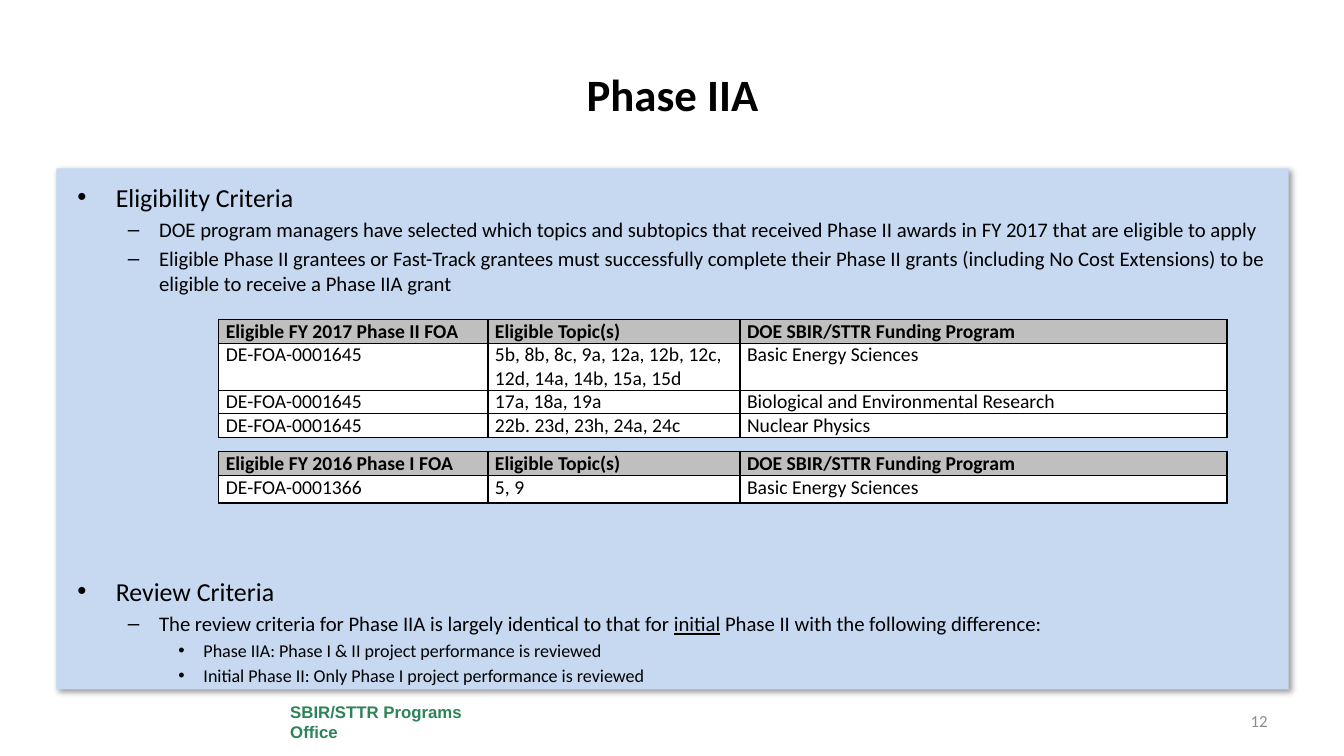
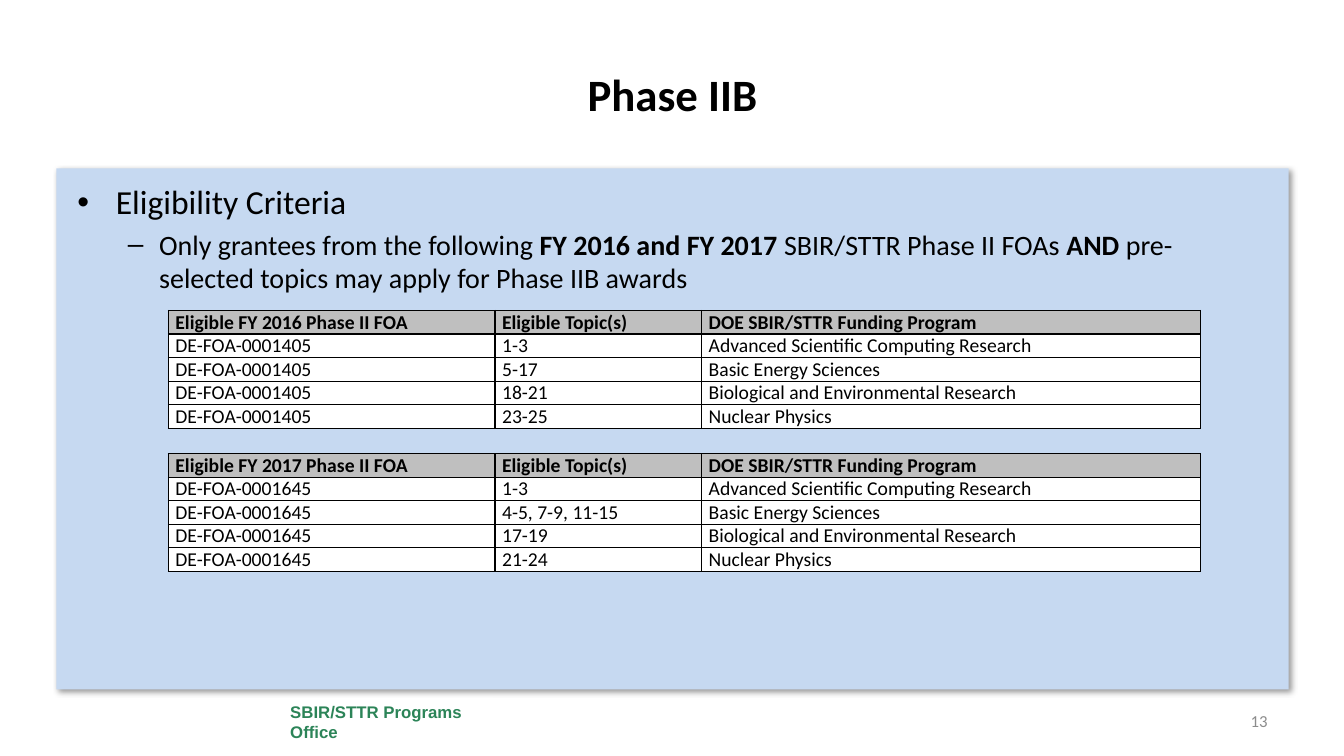
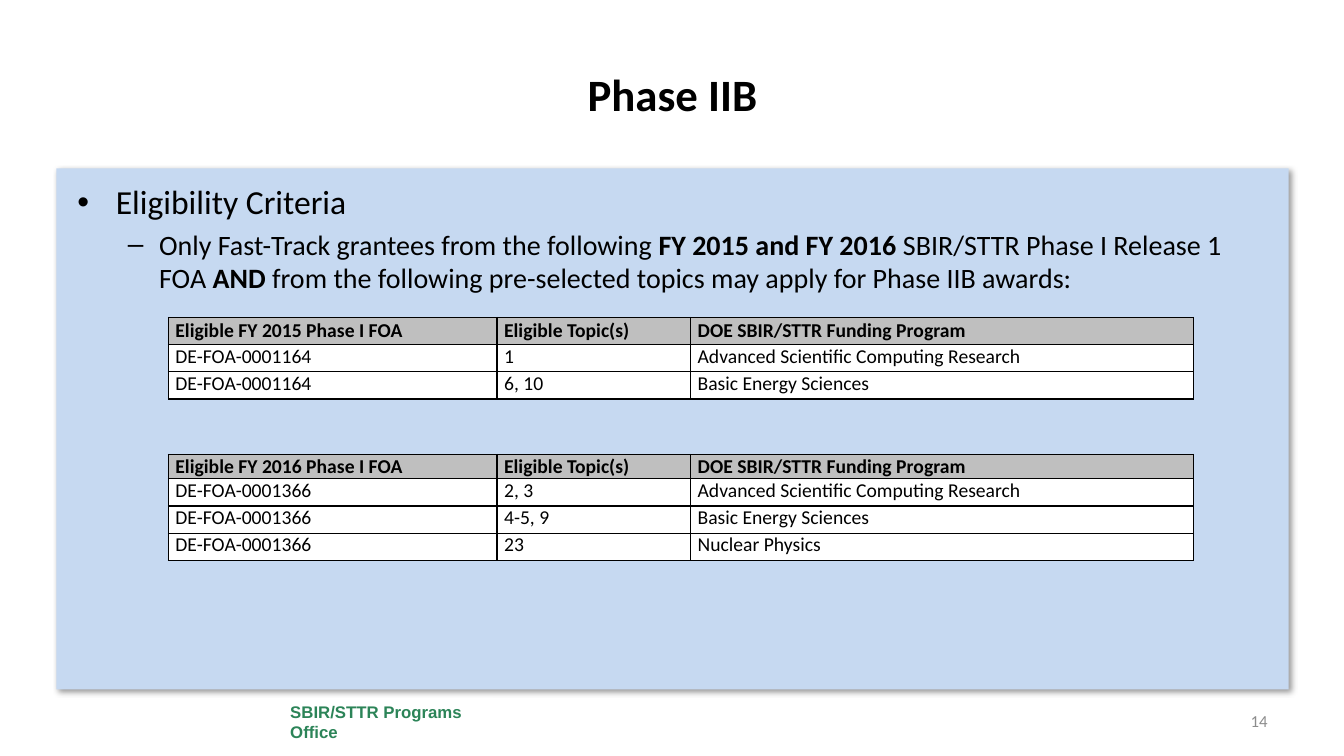
import pptx
import pptx.util
import pptx.dml.color
import pptx.enum.shapes
import pptx.enum.text
import pptx.oxml
import pptx.oxml.ns

Inches = pptx.util.Inches
Pt = pptx.util.Pt
ALIGN = pptx.enum.text.PP_ALIGN
MIDDLE = pptx.enum.text.MSO_ANCHOR.MIDDLE
NS = pptx.oxml.ns.nsdecls("a")

BLACK, WHITE, PANEL, HEADER = "000000", "FFFFFF", "C6D9F1", "BFBFBF"
GREEN, GRAY = "2C8458", "8C8C8C"
FOOTER = "SBIR/STTR Programs Office"
FIRST_NUMBER = 12
LEVELS = [(0.38, -0.38, "•"), (0.81, -0.31, "–"), (1.25, -0.25, "•")]

ASCR = "Advanced Scientific Computing Research"
BES = "Basic Energy Sciences"
BER = "Biological and Environmental Research"
NP = "Nuclear Physics"

SLIDES = [
    {
        "title": "Phase IIA",
        "sizes": (18.5, 14.8, 12.9),
        "bullets": [
            (0, ["Eligibility Criteria"]),
            (1, ["DOE program managers have selected which topics and subtopics that received "
                 "Phase II awards in FY 2017 that are eligible to apply"]),
            (1, ["Eligible Phase II grantees or Fast-Track grantees must successfully complete "
                 "their Phase II grants (including No Cost Extensions) to be eligible to receive "
                 "a Phase IIA grant"]),
            (0, ["Review Criteria"], 200),
            (1, ["The review criteria for Phase IIA is largely identical to that for ",
                 ("initial", {"underline": True}),
                 " Phase II with the following difference:"]),
            (2, ["Phase IIA: Phase I & II project performance is reviewed"]),
            (2, ["Initial Phase II: Only Phase I project performance is reviewed"]),
        ],
        "left": 2.17,
        "columns": (2.67, 2.5, 4.83),
        "tables": [
            (3.17, 0.23, 0.23, "Eligible FY 2017 Phase II FOA", "DE-FOA-0001645", [
                ("5b, 8b, 8c, 9a, 12a, 12b, 12c, 12d, 14a, 14b, 15a, 15d", BES),
                ("17a, 18a, 19a", BER),
                ("22b. 23d, 23h, 24a, 24c", NP)]),
            (4.48, 0.24, 0.27, "Eligible FY 2016 Phase I FOA", "DE-FOA-0001366", [
                ("5, 9", BES)]),
        ],
    },
    {
        "title": "Phase IIB",
        "sizes": (24, 20),
        "bullets": [
            (0, ["Eligibility Criteria"]),
            (1, ["Only grantees from the following ",
                 ("FY 2016 and FY 2017 ", {"bold": True}),
                 "SBIR/STTR Phase II FOAs ",
                 ("AND", {"bold": True}),
                 " pre-selected topics may apply for Phase IIB awards"]),
        ],
        "left": 1.67,
        "columns": (3.24, 2.05, 4.95),
        "tables": [
            (3.08, 0.23, 0.23, "Eligible FY 2016 Phase II FOA", "DE-FOA-0001405", [
                ("1-3", ASCR), ("5-17", BES), ("18-21", BER), ("23-25", NP)]),
            (4.5, 0.23, 0.23, "Eligible FY 2017 Phase II FOA", "DE-FOA-0001645", [
                ("1-3", ASCR), ("4-5, 7-9, 11-15", BES), ("17-19", BER), ("21-24", NP)]),
        ],
    },
    {
        "title": "Phase IIB",
        "sizes": (24, 20),
        "bullets": [
            (0, ["Eligibility Criteria"]),
            (1, ["Only Fast-Track grantees from the following ",
                 ("FY 2015 and FY 2016 ", {"bold": True}),
                 "SBIR/STTR Phase I Release 1 FOA ",
                 ("AND", {"bold": True}),
                 " from the following pre-selected topics may apply for Phase IIB awards:"]),
        ],
        "left": 1.67,
        "columns": (3.26, 1.92, 4.99),
        "tables": [
            (3.15, 0.27, 0.27, "Eligible FY 2015 Phase I FOA", "DE-FOA-0001164", [
                ("1", ASCR), ("6, 10", BES)]),
            (4.51, 0.24, 0.27, "Eligible FY 2016 Phase I FOA", "DE-FOA-0001366", [
                ("2, 3", ASCR), ("4-5, 9", BES), ("23", NP)]),
        ],
    },
]


def rgb(color):
    return pptx.dml.color.RGBColor.from_string(color)


def xml(text):
    return pptx.oxml.parse_xml(text)


def write(p, text, size=14, font="Calibri", color=BLACK, bold=False, underline=False,
          align=ALIGN.LEFT):
    p.alignment = align
    r = p.add_run()
    r.text = text
    r.font.size = Pt(size)
    r.font.name = font
    r.font.color.rgb = rgb(color)
    r.font.bold = bold
    r.font.underline = underline


def add_box(s, left, top, width, height, fill=None):
    at = [Inches(v) for v in (left, top, width, height)]
    if fill:
        sp = s.shapes.add_shape(pptx.enum.shapes.MSO_SHAPE.RECTANGLE, *at)
        sp.shadow.inherit = False
        sp.fill.solid()
        sp.fill.fore_color.rgb = rgb(fill)
        sp.line.fill.background()
    else:
        sp = s.shapes.add_textbox(*at)
    sp.text_frame.word_wrap = True
    return sp


def add_label(s, text, *at, fill=None, **fmt):
    tf = add_box(s, *at, fill=fill).text_frame
    tf.vertical_anchor = MIDDLE
    write(tf.paragraphs[0], text, **fmt)


def add_frame(s, title, number):
    panel = add_box(s, 0.56, 1.67, 12.22, 5.17, fill=PANEL)
    effects = panel._element.spPr.find(pptx.oxml.ns.qn("a:effectLst"))
    effects.append(xml(
        f'<a:outerShdw {NS} blurRad="{Pt(4)}" dist="{Pt(3)}" dir="2700000" algn="tl" '
        f'rotWithShape="0"><a:srgbClr val="{BLACK}"><a:alpha val="40000"/></a:srgbClr>'
        '</a:outerShdw>'))
    add_label(s, FOOTER, 2.78, 6.92, 2.11, 0.48, fill=WHITE,
              size=12, font="Arial", color=GREEN, bold=True)
    add_label(s, title, 0.67, 0.3, 12, 1.25, size=32, bold=True, align=ALIGN.CENTER)
    add_label(s, str(number), 10.56, 6.95, 2.11, 0.4, size=12, color=GRAY, align=ALIGN.RIGHT)


def add_bullets(s, bullets, sizes):
    tf = add_box(s, 0.67, 1.75, 12, 4.95).text_frame
    for i, (level, runs, *gap) in enumerate(bullets):
        p = tf.add_paragraph() if i else tf.paragraphs[0]
        size = sizes[level]
        left, indent, mark = LEVELS[level]
        p.level = level
        pPr = p._p.get_or_add_pPr()
        pPr.set("marL", str(Inches(left)))
        pPr.set("indent", str(Inches(indent)))
        pPr.append(xml(f'<a:buFont {NS} typeface="Arial"/>'))
        pPr.append(xml(f'<a:buChar {NS} char="{mark}"/>'))
        if i:
            p.space_before = Pt(gap[0] if gap else round(0.2 * size, 1))
        for run in runs:
            text, fmt = (run, {}) if isinstance(run, str) else run
            write(p, text, size=size, **fmt)


def format_cell(cell, text, header):
    cell.margin_left = cell.margin_right = Inches(0.07)
    cell.margin_top = cell.margin_bottom = 0
    if header:
        cell.vertical_anchor = MIDDLE
    tcPr = cell._tc.get_or_add_tcPr()
    for side in "LRTB":
        tcPr.append(xml(
            f'<a:ln{side} {NS} w="{Pt(1)}"><a:solidFill><a:srgbClr val="{BLACK}"/>'
            f'</a:solidFill></a:ln{side}>'))
    cell.fill.solid()
    cell.fill.fore_color.rgb = rgb(HEADER if header else WHITE)
    write(cell.text_frame.paragraphs[0], text, bold=header)


def add_foa_table(s, left, columns, top, header_height, row_height, heading, foa, topics):
    rows = [(heading, "Eligible Topic(s)", "DOE SBIR/STTR Funding Program")]
    rows += [(foa, *row) for row in topics]
    heights = [header_height] + [row_height] * len(topics)
    table = s.shapes.add_table(len(rows), len(columns), Inches(left), Inches(top),
                               Inches(sum(columns)), Inches(sum(heights))).table
    table.horz_banding = False
    for column, width in zip(table.columns, columns):
        column.width = Inches(width)
    for i, (row, height) in enumerate(zip(table.rows, heights)):
        row.height = Inches(height)
        for cell, text in zip(row.cells, rows[i]):
            format_cell(cell, text, i == 0)


def main():
    prs = pptx.Presentation()
    prs.slide_width, prs.slide_height = Inches(13.33), Inches(7.5)
    for number, content in enumerate(SLIDES, FIRST_NUMBER):
        s = prs.slides.add_slide(prs.slide_layouts[6])
        add_frame(s, content["title"], number)
        add_bullets(s, content["bullets"], content["sizes"])
        for table in content["tables"]:
            add_foa_table(s, content["left"], content["columns"], *table)
    prs.save("out.pptx")


if __name__ == "__main__":
    main()
